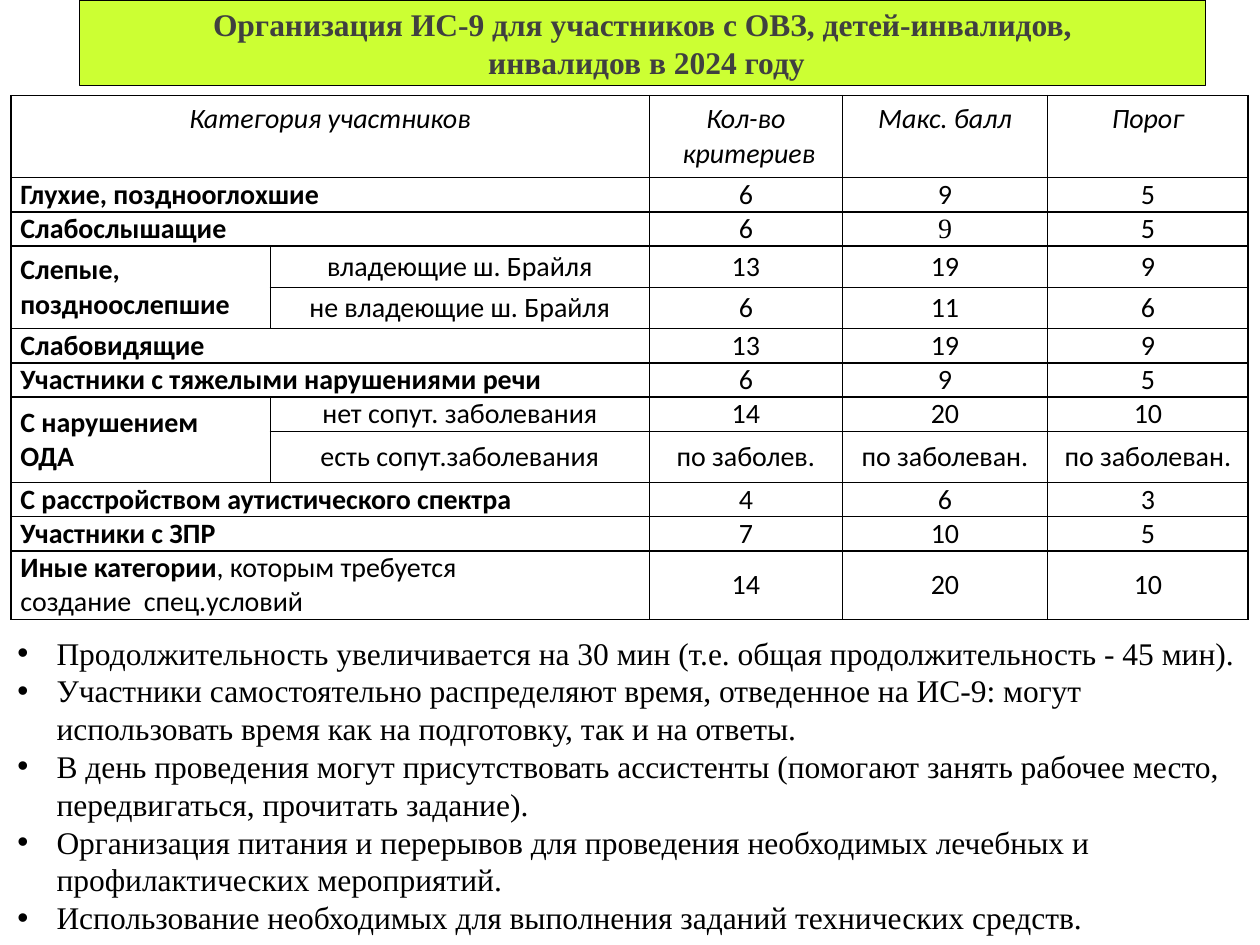
from lxml.etree import SubElement
from pptx import Presentation
from pptx.dml.color import RGBColor
from pptx.enum.shapes import MSO_SHAPE
from pptx.enum.text import MSO_ANCHOR, PP_ALIGN
from pptx.oxml import parse_xml
from pptx.oxml.ns import nsdecls, qn
from pptx.util import Cm, Pt

SERIF, SANS = "Times New Roman", "Calibri"
TITLE = ["Организация ИС-9 для участников с ОВЗ, детей-инвалидов,",
         " инвалидов в 2024 году"]
HEAD = ["Категория участников", "", "Кол-во\n критериев", "Макс. балл", "Порог"]
ROWS = [
    ["Глухие, позднооглохшие", "", "6", "9", "5"],
    ["Слабослышащие", "", "6", "9", "5"],
    ["Слепые,\nпоздноослепшие", "владеющие ш. Брайля", "13", "19", "9"],
    ["", "не владеющие ш. Брайля", "6", "11", "6"],
    ["Слабовидящие", "", "13", "19", "9"],
    ["Участники с тяжелыми нарушениями речи", "", "6", "9", "5"],
    ["С нарушением\nОДА", "нет сопут. заболевания", "14", "20", "10"],
    ["", "есть сопут.заболевания", "по заболев.", "по заболеван.", "по заболеван."],
    ["С расстройством аутистического спектра", "", "4", "6", "3"],
    ["Участники с ЗПР", "", "7", "10", "5"],
    ["", "", "14", "20", "10"],
]
WIDTHS = [5.23, 7.64, 3.89, 4.14, 4.04]
HEIGHTS = [1.65, 0.69, 0.69, 0.83, 0.83, 0.69, 0.69, 0.69, 1.03, 0.69, 0.69, 1.37]
NOTES = [
    "Продолжительность увеличивается на 30 мин (т.е. общая продолжительность - 45 мин).",
    "Участники самостоятельно распределяют время, отведенное на ИС-9: могут "
    "использовать время как на подготовку, так и на ответы.",
    "В день проведения могут присутствовать ассистенты (помогают занять рабочее место, "
    "передвигаться, прочитать задание).",
    "Организация питания и перерывов для проведения необходимых лечебных и "
    "профилактических мероприятий.",
    "Использование необходимых для выполнения заданий технических средств.",
]


def color(code):
    """Turn a hex string into a colour."""
    return RGBColor.from_string(code)


def paint(item, code):
    """Give a shape or cell a solid fill."""
    item.fill.solid()
    item.fill.fore_color.rgb = color(code)


def add_run(para, text, size, face, tint="000000", bold=False, slant=False):
    """Append one styled run to a paragraph."""
    run = para.add_run()
    run.text = text
    font = run.font
    font.size, font.name, font.bold, font.italic = Pt(size), face, bold, slant
    font.color.rgb = color(tint)


def add_para(frame, index, align):
    """Return the paragraph at the index, adding it when it is not the first."""
    para = frame.add_paragraph() if index else frame.paragraphs[0]
    para.alignment = align
    return para


def add_title(slide):
    """Draw the title band."""
    band = slide.shapes.add_shape(MSO_SHAPE.RECTANGLE, Cm(1.6), 0, Cm(22.71), Cm(1.73))
    band.shadow.inherit = False
    paint(band, "CCFF33")
    band.line.color.rgb = color("000000")
    band.line.width = Pt(0.75)
    frame = band.text_frame
    frame.word_wrap = True
    frame.vertical_anchor = MSO_ANCHOR.MIDDLE
    para = add_para(frame, 0, PP_ALIGN.CENTER)
    for index, line in enumerate(TITLE):
        if index:
            para.add_line_break()
        add_run(para, line, 18, SERIF, "404040", bold=True)


def add_edges(cell):
    """Put a black border on every side of a cell."""
    props = cell._tc.get_or_add_tcPr()
    for index, side in enumerate("LRTB"):
        props.insert(index, parse_xml(
            f'<a:ln{side} {nsdecls("a")} w="12700"><a:solidFill>'
            f'<a:srgbClr val="000000"/></a:solidFill></a:ln{side}>'))


def fill_cell(cell, lines, head=False, left=False, face=SANS):
    """Style a cell and write its lines, each a list of (text, bold) runs."""
    paint(cell, "FFFFFF")
    add_edges(cell)
    cell.margin_left = cell.margin_right = Cm(0.25 if head else 0.19)
    cell.margin_top = cell.margin_bottom = Cm(0.13 if head else 0)
    cell.vertical_anchor = MSO_ANCHOR.TOP if head else MSO_ANCHOR.MIDDLE
    for index, runs in enumerate(lines):
        para = add_para(cell.text_frame, index, PP_ALIGN.LEFT if left else PP_ALIGN.CENTER)
        for text, bold in runs:
            add_run(para, text, 16, face, bold=bold, slant=head)


def add_grid(slide):
    """Draw the table of categories and scores."""
    data = [HEAD] + ROWS
    last = len(data) - 1
    table = slide.shapes.add_table(len(data), len(HEAD), Cm(0.22), Cm(1.93),
                                   Cm(sum(WIDTHS)), Cm(sum(HEIGHTS))).table
    for col, width in zip(table.columns, WIDTHS):
        col.width = Cm(width)
    for row, height in zip(table.rows, HEIGHTS):
        row.height = Cm(height)
    for r, texts in enumerate(data):
        for c, text in enumerate(texts):
            left = r > 0 and c == 0
            lines = [[(line, left)] for line in text.split("\n") if line]
            if left and r == last:
                lines = [[("Иные категории", True), (", которым требуется", False)],
                         [("создание  спец.условий", False)]]
            face = SERIF if (r, c) == (2, 3) else SANS
            fill_cell(table.cell(r, c), lines, r == 0, left, face)
        if not texts[1]:
            table.cell(r, 0).merge(table.cell(r, 1))
        elif texts[0]:
            table.cell(r, 0).merge(table.cell(r + 1, 0))


def add_notes(slide):
    """Draw the bulleted list under the table."""
    box = slide.shapes.add_textbox(Cm(0.1), Cm(12.65), Cm(25.4), Cm(6.4))
    paint(box, "FFFFFF")
    frame = box.text_frame
    frame.word_wrap = True
    for index, text in enumerate(NOTES):
        para = add_para(frame, index, PP_ALIGN.LEFT)
        props = para._p.get_or_add_pPr()
        props.set("marL", str(Cm(0.79)))
        props.set("indent", str(-Cm(0.79)))
        SubElement(props, qn("a:buFont")).set("typeface", "Arial")
        SubElement(props, qn("a:buChar")).set("char", "•")
        add_run(para, text, 18, SERIF)


def main():
    """Build and save the slide."""
    deck = Presentation()
    deck.slide_width, deck.slide_height = Cm(25.4), Cm(19.05)
    slide = deck.slides.add_slide(deck.slide_layouts[6])
    add_title(slide)
    add_grid(slide)
    add_notes(slide)
    deck.save("out.pptx")


if __name__ == "__main__":
    main()
